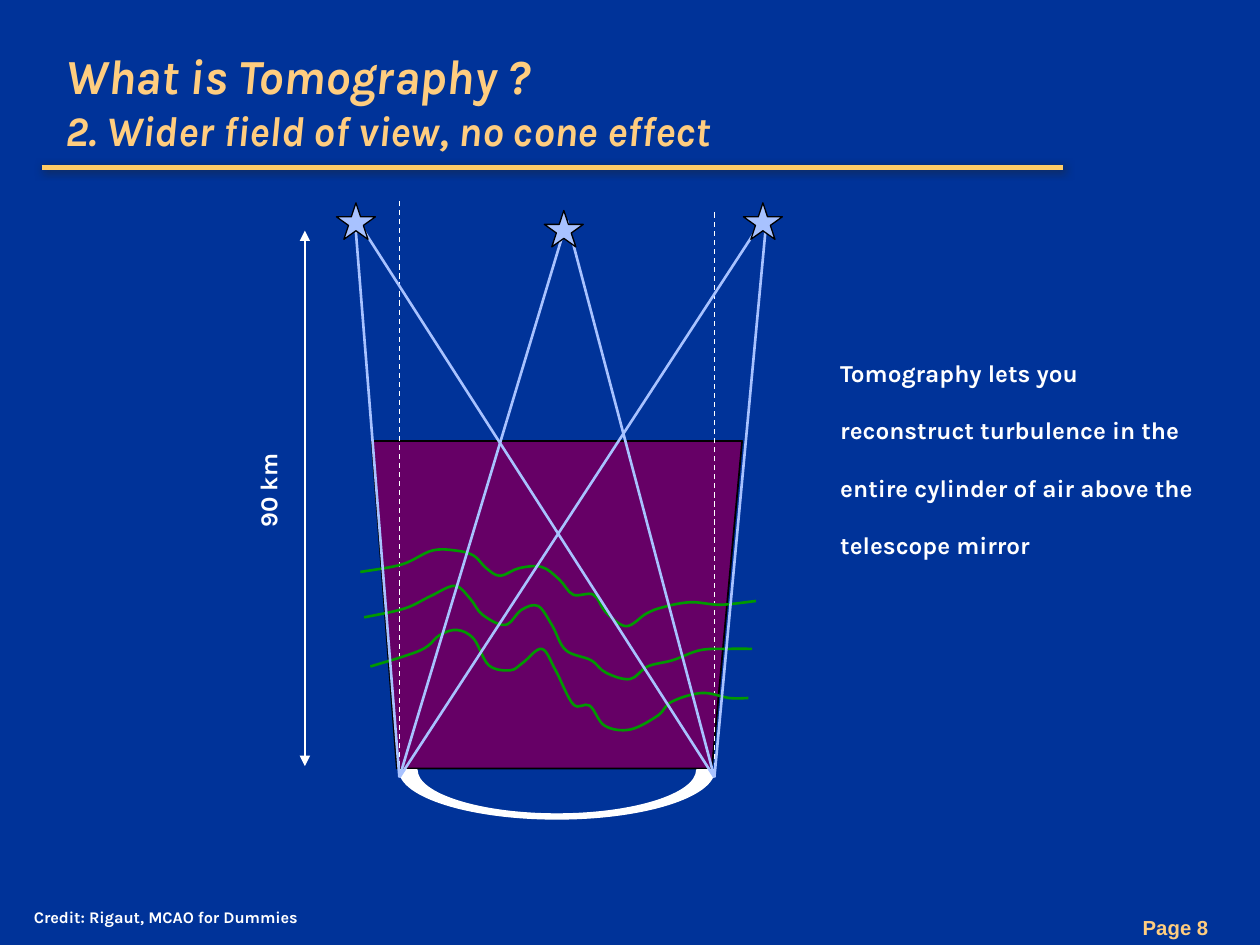
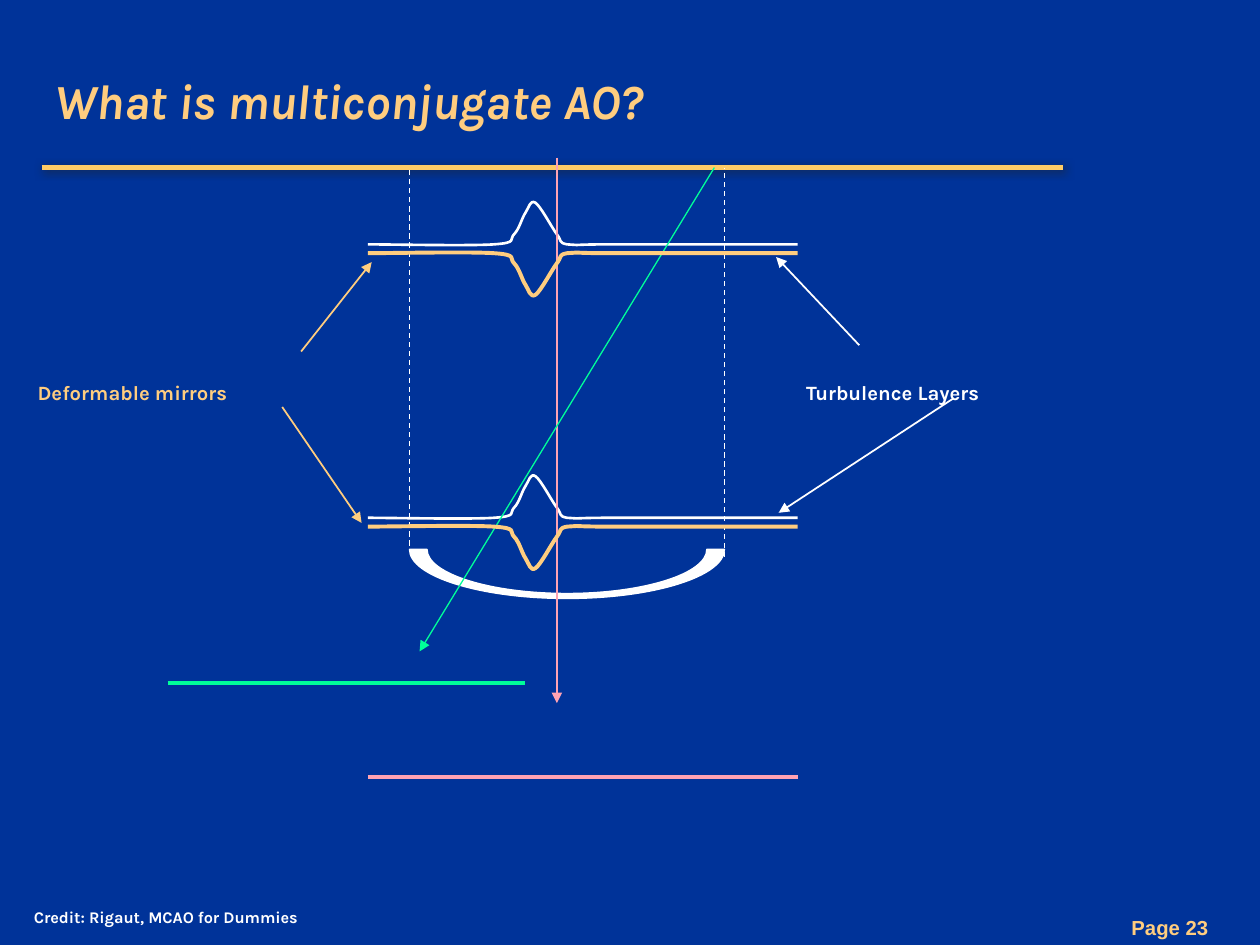
from dataclasses import dataclass

from lxml.etree import SubElement
from pptx import Presentation
from pptx.dml.color import RGBColor
from pptx.enum.dml import MSO_LINE as Dash
from pptx.enum.shapes import MSO_CONNECTOR as Connector, MSO_SHAPE as Preset
from pptx.enum.text import MSO_ANCHOR as Anchor, MSO_AUTO_SIZE as AutoSize, PP_ALIGN as Align
from pptx.oxml.ns import qn
from pptx.util import Inches, Pt


@dataclass(frozen=True)
class Theme:
    background: str = "003399"
    rule: str = "FFCC66"
    rule_shadow: str = "232323"
    gold: str = "FFCD7F"
    white: str = "FFFFFF"
    black: str = "000000"
    air: str = "660066"
    turbulence: str = "009900"
    starlight: str = "A8C2FF"
    on_axis: str = "FFA3B3"
    off_axis: str = "00FF99"
    font: str = "Karla"
    page_font: str = "Arial"
    title_size: int = 28
    subtitle_size: int = 24
    body_size: int = 24
    label_size: int = 20
    credit_size: int = 16
    lowered: str = "-25000"  # baseline of all text except titles


THEME = Theme()
CREDIT = "Credit: Rigaut, MCAO for Dummies"


def rgb(code):
    return RGBColor.from_string(code)


def spline(knots):
    """Bezier segments (control, control, end) of a smooth curve through the knots."""
    padded = [knots[0], *knots, knots[-1]]
    return [((b[0] + (c[0] - a[0]) / 6, b[1] + (c[1] - a[1]) / 6),
             (c[0] - (d[0] - b[0]) / 6, c[1] - (d[1] - b[1]) / 6), c)
            for a, b, c, d in zip(padded, padded[1:], padded[2:], padded[3:])]


def lower_arc(center, top, radius_x, radius_y):
    """Two Bezier segments along the lower half of an ellipse, right or left by radius_x."""
    bend = 0.55
    bottom, deep = top + radius_y, top + bend * radius_y
    return [((center + radius_x, deep), (center + bend * radius_x, bottom), (center, bottom)),
            ((center - bend * radius_x, bottom), (center - radius_x, deep),
             (center - radius_x, top))]


class Deck:
    def __init__(self, theme):
        self.theme = theme
        self.prs = Presentation()
        self.prs.slide_width, self.prs.slide_height = Inches(10), Inches(7.5)
        backdrop = self.prs.slide_master.background.fill
        backdrop.solid()
        backdrop.fore_color.rgb = rgb(theme.background)
        self.slide = None

    def add_slide(self, title, title_box, page):
        theme = self.theme
        self.slide = self.prs.slides.add_slide(self.prs.slide_layouts[5])
        self.title(title, title_box)
        rule = self.line((0.33, 1.33), (8.44, 1.33), theme.rule, 3)
        self.cast_shadow(rule)
        page_number = self.text(f"Page {page}", (7.22, 7.03, 2.59, 0.43),
                                theme.label_size, theme.gold, font=theme.page_font)
        page_number.text_frame.paragraphs[0].alignment = Align.RIGHT
        page_number.text_frame.margin_right = Inches(0.22)
        self.text(CREDIT, (0.17, 7, 3.88, 0.38), theme.credit_size, theme.white, wrap=False)

    def title(self, lines, box):
        theme = self.theme
        heading = self.slide.shapes.title
        heading.left, heading.top, heading.width, heading.height = map(Inches, box)
        frame = heading.text_frame
        frame.text = "\v".join(lines)
        frame.vertical_anchor = Anchor.MIDDLE
        frame.auto_size = AutoSize.NONE
        frame.word_wrap = True
        paragraph = frame.paragraphs[0]
        paragraph.alignment = Align.LEFT
        for run, size in zip(paragraph.runs, (theme.title_size, theme.subtitle_size)):
            self.style(run, size, theme.gold, theme.font)
            run.font.italic = True

    @staticmethod
    def style(run, size, color, font):
        run.font.size = Pt(size)
        run.font.name = font
        run.font.bold = True
        run.font.color.rgb = rgb(color)

    def text(self, words, box, size, color, font=None, wrap=True):
        label = self.slide.shapes.add_textbox(*map(Inches, box))
        frame = label.text_frame
        frame.text = words
        frame.word_wrap = wrap
        frame.auto_size = AutoSize.SHAPE_TO_FIT_TEXT
        run = frame.paragraphs[0].runs[0]
        self.style(run, size, color, font or self.theme.font)
        run.font._element.set("baseline", self.theme.lowered)
        return label

    def line(self, start, end, color, width, dashed=False, arrows=()):
        """Straight line; arrows names its tipped ends: headEnd, tailEnd."""
        connector = self.slide.shapes.add_connector(
            Connector.STRAIGHT, *map(Inches, (*start, *end)))
        connector.line.color.rgb = rgb(color)
        connector.line.width = Pt(width)
        if dashed:
            connector.line.dash_style = Dash.DASH
        properties = connector._element.spPr
        for tip in arrows:
            SubElement(properties.find(qn("a:ln")), qn(f"a:{tip}"), type="triangle")
        SubElement(properties, qn("a:effectLst"))
        return connector

    def cast_shadow(self, connector):
        effects = connector._element.spPr.find(qn("a:effectLst"))
        shadow = SubElement(effects, qn("a:outerShdw"), blurRad=str(Pt(5)),
                            dist=str(Pt(1.4)), dir="2700000", rotWithShape="0")
        tint = SubElement(shadow, qn("a:srgbClr"), val=self.theme.rule_shadow)
        SubElement(tint, qn("a:alpha"), val="75000")

    @staticmethod
    def paint(shape, fill, color, width):
        shape.shadow.inherit = False
        if fill:
            shape.fill.solid()
            shape.fill.fore_color.rgb = rgb(fill)
        else:
            shape.fill.background()
        shape.line.color.rgb = rgb(color)
        shape.line.width = Pt(width)

    def outline(self, start, segments, color, width, fill=None):
        """Freeform of segments (end,) or (control, control, end); closed when filled."""
        builder = self.slide.shapes.build_freeform(*map(Inches, start))
        builder.add_line_segments([tuple(map(Inches, segment[-1])) for segment in segments],
                                  close=fill is not None)
        shape = builder.convert_to_shape()
        steps = list(shape._element.iter(qn("a:lnTo")))
        for step, segment in zip(steps, segments):
            if len(segment) == 3:
                self.bend(shape, step, segment)
        self.paint(shape, fill, color, width)

    @staticmethod
    def bend(shape, step, segment):
        """Turn one straight step of a freeform into a Bezier curve."""
        curve = step.makeelement(qn("a:cubicBezTo"))
        for x, y in segment:
            SubElement(curve, qn("a:pt"), x=str(Inches(x) - shape.left),
                       y=str(Inches(y) - shape.top))
        step.getparent().replace(step, curve)

    def wave(self, knots, color, width):
        self.outline(knots[0], spline(knots), color, width)

    def star(self, left, top):
        shape = self.slide.shapes.add_shape(
            Preset.STAR_5_POINT, *map(Inches, (left, top, 0.31, 0.29)))
        self.paint(shape, self.theme.starlight, self.theme.black, 0.75)

    def telescope_mirror(self, center, top):
        outer = lower_arc(center, top, 1.25, 0.39)
        inner = lower_arc(center, top, -1.11, 0.35)
        self.outline((center + 1.25, top), [*outer, ((center - 1.11, top),), *inner],
                     self.theme.white, 0.75, fill=self.theme.white)

    def sight_limit(self, x, top, bottom):
        self.line((x, bottom), (x, top), self.theme.white, 0.75, dashed=True)

    def wavefront(self, level, direction, color, width):
        """Flat wave with one bump; direction -1 points up, 1 points down."""
        bump = [(2.92, 0), (3.92, 0), (4.08, 0.08), (4.17, 0.25), (4.25, 0.33),
                (4.42, 0.08), (4.5, 0), (4.83, 0), (6.33, 0)]
        self.wave([(x, level + direction * rise) for x, rise in bump], color, width)


TURBULENCE_LAYERS = [
    [(2.94, 5.29), (3.34, 5.16), (3.49, 5.04), (3.63, 5), (3.76, 5.07), (3.88, 5.28),
     (4.05, 5.32), (4.15, 5.26), (4.3, 5.15), (4.41, 5.32), (4.55, 5.59), (4.68, 5.6),
     (4.8, 5.76), (5, 5.79), (5.22, 5.68), (5.33, 5.57), (5.57, 5.5), (5.79, 5.54),
     (5.94, 5.54)],
    [(2.89, 4.9), (3.21, 4.83), (3.42, 4.73), (3.61, 4.65), (3.73, 4.75), (3.83, 4.88),
     (4.01, 4.96), (4.14, 4.84), (4.27, 4.81), (4.38, 4.96), (4.49, 5.16), (4.69, 5.24),
     (4.81, 5.34), (5, 5.39), (5.14, 5.29), (5.34, 5.24), (5.56, 5.16), (5.79, 5.15),
     (5.97, 5.15)],
    [(2.86, 4.54), (3.19, 4.48), (3.43, 4.37), (3.62, 4.37), (3.76, 4.41), (3.86, 4.51),
     (3.97, 4.57), (4.12, 4.51), (4.3, 4.5), (4.44, 4.6), (4.55, 4.72), (4.71, 4.72),
     (4.81, 4.86), (4.97, 4.97), (5.13, 4.87), (5.26, 4.82), (5.48, 4.78), (5.72, 4.8),
     (6, 4.77)],
]


def tomography(deck):
    theme = deck.theme
    deck.add_slide(["What is Tomography ?", "2. Wider field of view, no cone effect"],
                   (0.42, 0.17, 7.42, 1.25), page=8)
    deck.outline((3.15, 6.1), [((2.95, 3.5),), ((5.89, 3.5),), ((5.65, 6.1),)],
                 theme.black, 1, fill=theme.air)
    deck.telescope_mirror(4.42, 6.11)
    mirror_left, mirror_right = (3.17, 6.17), (5.67, 6.17)
    deck.sight_limit(3.17, 1.58, 6.08)
    deck.sight_limit(5.67, 1.67, 6.17)
    deck.line((2.42, 1.83), (2.42, 6.08), theme.white, 0.75, arrows=("headEnd", "tailEnd"))
    altitude = deck.text("90 km", (1.4, 3.45, 1.17, 0.5), theme.body_size, theme.white,
                         wrap=False)
    altitude.rotation = 270
    for layer in TURBULENCE_LAYERS:
        deck.wave(layer, theme.turbulence, 1.5)

    # star corner, start of the ray to the left and to the right mirror edge
    guide_stars = [((4.32, 1.67), (4.5, 1.75), (4.5, 1.75)),
                   ((2.67, 1.61), (2.82, 1.78), (2.83, 1.74)),
                   ((5.9, 1.61), (6.05, 1.75), (6.08, 1.78))]
    for corner, to_left, to_right in guide_stars:
        deck.line(to_left, mirror_left, theme.starlight, 1.5)
        deck.line(to_right, mirror_right, theme.starlight, 1.5)
        deck.star(*corner)
    deck.text("Tomography lets you reconstruct turbulence in the entire cylinder of air "
              "above the telescope mirror", (6.57, 2.57, 3.18, 2.52),
              theme.body_size, theme.white)


def multiconjugate(deck):
    theme = deck.theme
    deck.add_slide(["What is multiconjugate AO?"], (0.33, 0.08, 7.83, 1.42), page=23)
    deck.telescope_mirror(4.5, 4.36)
    deck.sight_limit(3.25, 1.33, 4.33)
    deck.sight_limit(5.75, 1.33, 4.42)
    layer_levels = (1.94, 4.11)
    for level in layer_levels:
        deck.wavefront(level, -1, theme.white, 1.5)

    tip = ("tailEnd",)
    deck.line((2.92, 6.17), (6.33, 6.17), theme.on_axis, 2.25)
    deck.line((4.42, 1.25), (4.42, 5.58), theme.on_axis, 0.75, arrows=tip)
    deck.line((5.67, 1.33), (3.33, 5.17), theme.off_axis, 0.75, arrows=tip)
    deck.line((1.33, 5.42), (4.17, 5.42), theme.off_axis, 2.25)
    for level in layer_levels:
        deck.wavefront(level + 0.07, 1, theme.gold, 2.25)

    callouts = [
        ("Deformable mirrors", (0.2, 2.78, 3.46, 0.43), theme.gold,
         [((2.39, 2.79), (2.95, 2.08)), ((2.24, 3.23), (2.87, 4.15))]),
        ("Turbulence Layers", (6.3, 2.78, 3.58, 0.43), theme.white,
         [((7.57, 3.16), (6.18, 4.07)), ((6.82, 2.74), (6.16, 2.04))]),
    ]
    for words, box, color, pointers in callouts:
        deck.text(words, box, theme.label_size, color)
        for start, end in pointers:
            deck.line(start, end, color, 1, arrows=tip)


def main():
    deck = Deck(THEME)
    tomography(deck)
    multiconjugate(deck)
    deck.prs.save("out.pptx")


if __name__ == "__main__":
    main()
